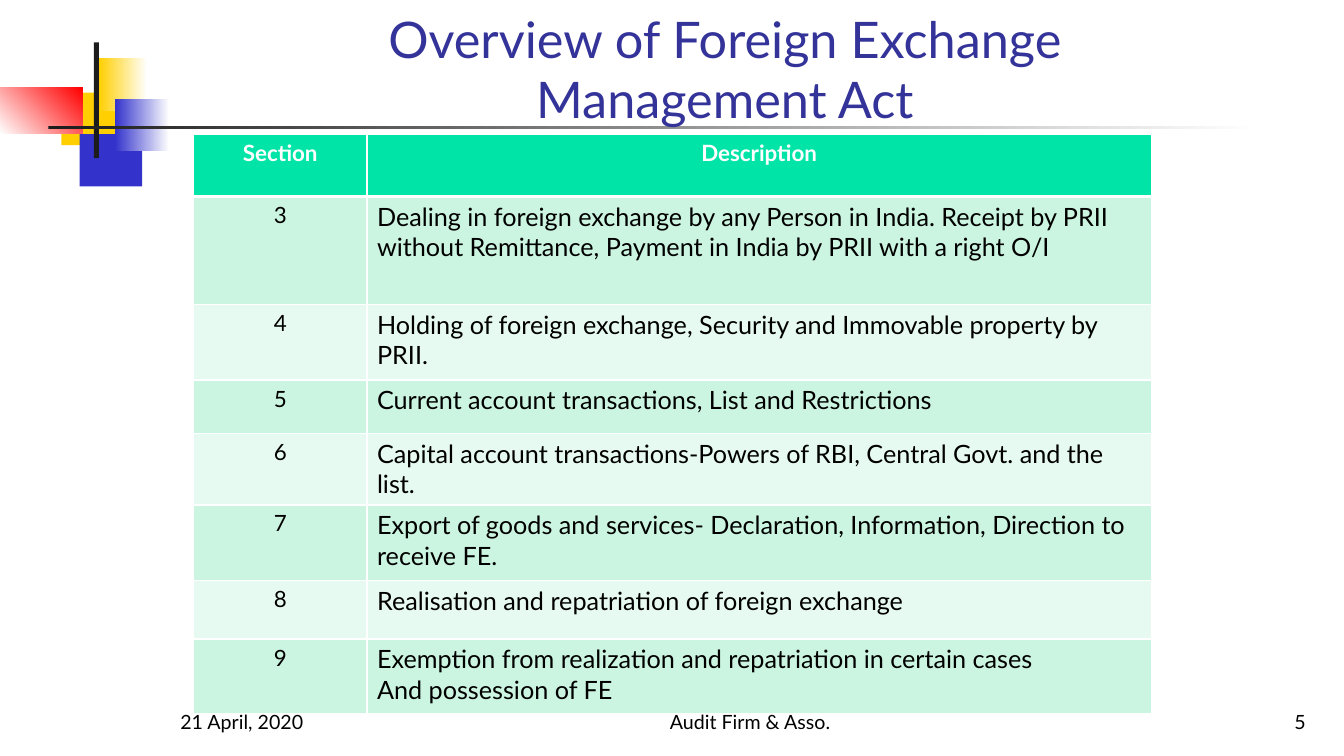
from lxml.etree import SubElement
from pptx import Presentation
from pptx.dml.color import RGBColor
from pptx.enum.shapes import MSO_SHAPE as Shape
from pptx.enum.text import MSO_ANCHOR as Anchor, MSO_AUTO_SIZE as AutoSize, PP_ALIGN as Align
from pptx.oxml.ns import qn
from pptx.util import Inches, Pt

FONT = "Lato"
WHITE = RGBColor(0xFF, 0xFF, 0xFF)
BLACK = RGBColor(0, 0, 0)
CHARCOAL = RGBColor(0x1C, 0x1C, 0x1C)
YELLOW = RGBColor(0xFF, 0xCF, 0x01)
BLUE = RGBColor(0x33, 0x33, 0xCC)
RED = RGBColor(0xFF, 0, 0)
TITLE_BLUE = RGBColor(0x33, 0x33, 0x99)
HEADER_GREEN = RGBColor(0x00, 0xE4, 0xA8)
BANDS = (RGBColor(0xCC, 0xF5, 0xE1), RGBColor(0xE7, 0xFA, 0xF1))

TITLE = "Overview of Foreign Exchange Management Act"
HEADER = ("Section", "Description")
SECTIONS = [
    ("3", "Dealing in foreign exchange by any Person in India. Receipt by PRII "
          "without Remittance, Payment in India by PRII with a right O/I"),
    ("4", "Holding of foreign exchange, Security and Immovable property by PRII."),
    ("5", "Current account transactions, List and Restrictions"),
    ("6", "Capital account transactions-Powers of RBI, Central Govt. and the list."),
    ("7", "Export of goods and services- Declaration, Information, Direction to receive FE."),
    ("8", "Realisation and repatriation of foreign exchange"),
    ("9", "Exemption from realization and repatriation in certain cases\nAnd possession of FE"),
]
COLUMN_WIDTHS = (1.72, 7.78)
ROW_HEIGHTS = (0.62, 1.07, 0.75, 0.53, 0.71, 0.75, 0.58, 0.74)
FOOTERS = [
    ("21 April, 2020", 1.69, 2.78, Align.LEFT),
    ("Audit Firm & Asso.", 5.33, 4.22, Align.CENTER),
    ("5", 10.27, 2.78, Align.RIGHT),
]
ORNAMENTS = [
    ((0.61, 0.92, 0.64, 0.52), (YELLOW,), 0),
    ((0.79, 1.33, 0.62, 0.52), (BLUE,), 0),
    ((0.98, 0.58, 0.48, 0.52), (YELLOW, WHITE), 0),
    ((1.14, 0.98, 0.54, 0.52), (BLUE, WHITE), 0),
    ((0, 0.87, 0.82, 0.46), (WHITE, RED), 45),
    ((0.93, 0.42, 0.05, 1.15), (CHARCOAL,), 0),
    ((0.48, 1.25, 12, 0.03), (CHARCOAL, WHITE), 0),
]


def write(frame, text, size, color, align, bold=False):
    frame.text = text
    for paragraph in frame.paragraphs:
        paragraph.alignment = align
        for run in paragraph.runs:
            font = run.font
            font.name, font.size, font.bold = FONT, Pt(size), bold
            font.color.rgb = color


def add_ornament(slide, box, colors, angle):
    ornament = slide.shapes.add_shape(Shape.RECTANGLE, *map(Inches, box))
    ornament.shadow.inherit = False
    ornament.line.fill.background()
    if len(colors) == 1:
        ornament.fill.solid()
        ornament.fill.fore_color.rgb = colors[0]
        return
    ornament.fill.gradient()
    ornament.fill.gradient_angle = angle
    for stop, color in zip(ornament.fill.gradient_stops, colors):
        stop.color.rgb = color


def set_borders(cell, widths):
    properties = cell._tc.get_or_add_tcPr()
    for position, (side, width) in enumerate(widths.items()):
        line = SubElement(properties, qn(f"a:{side}"), w=str(Pt(width)))
        fill = SubElement(line, qn("a:solidFill"))
        SubElement(fill, qn("a:srgbClr"), val=str(WHITE))
        properties.remove(line)
        properties.insert(position, line)


def add_sections_table(slide):
    rows = [HEADER, *SECTIONS]
    table = slide.shapes.add_table(
        len(rows), len(HEADER), Inches(1.92), Inches(1.33),
        Inches(sum(COLUMN_WIDTHS)), Inches(sum(ROW_HEIGHTS))).table
    for column, width in zip(table.columns, COLUMN_WIDTHS):
        column.width = Inches(width)
    for r, (row, height) in enumerate(zip(rows, ROW_HEIGHTS)):
        table.rows[r].height = Inches(height)
        is_header = r == 0
        for c, text in enumerate(row):
            cell = table.cell(r, c)
            cell.fill.solid()
            cell.fill.fore_color.rgb = HEADER_GREEN if is_header else BANDS[(r - 1) % 2]
            write(cell.text_frame, text,
                  16 if is_header or c == 0 else 18,
                  WHITE if is_header else BLACK,
                  Align.CENTER if is_header or c == 0 else Align.LEFT, is_header)
            set_borders(cell, {"lnL": 1, "lnR": 1, "lnT": 3 if r == 1 else 1,
                               "lnB": 3 if is_header else 1})


def add_title(slide):
    title = slide.shapes.title
    title.left, title.top, title.width, title.height = map(Inches, (2.93, 0.23, 8.52, 1.1))
    frame = title.text_frame
    frame.auto_size = AutoSize.NONE
    frame.word_wrap = True
    frame.vertical_anchor = Anchor.BOTTOM
    write(frame, TITLE, 36, TITLE_BLUE, Align.CENTER)
    slide.shapes._spTree.append(title._element)


def add_footer(slide, text, left, width, align):
    frame = slide.shapes.add_textbox(
        Inches(left), Inches(6.83), Inches(width), Inches(0.5)).text_frame
    frame.word_wrap = True
    frame.vertical_anchor = Anchor.BOTTOM
    write(frame, text, 14, BLACK, align)


def main():
    """Build the slide on the sections of the Foreign Exchange Management Act."""
    deck = Presentation()
    deck.slide_width, deck.slide_height = Inches(13.33), Inches(7.5)
    slide = deck.slides.add_slide(deck.slide_layouts[5])
    for ornament in ORNAMENTS:
        add_ornament(slide, *ornament)
    add_title(slide)
    add_sections_table(slide)
    for footer in FOOTERS:
        add_footer(slide, *footer)
    deck.save("out.pptx")


if __name__ == "__main__":
    main()
